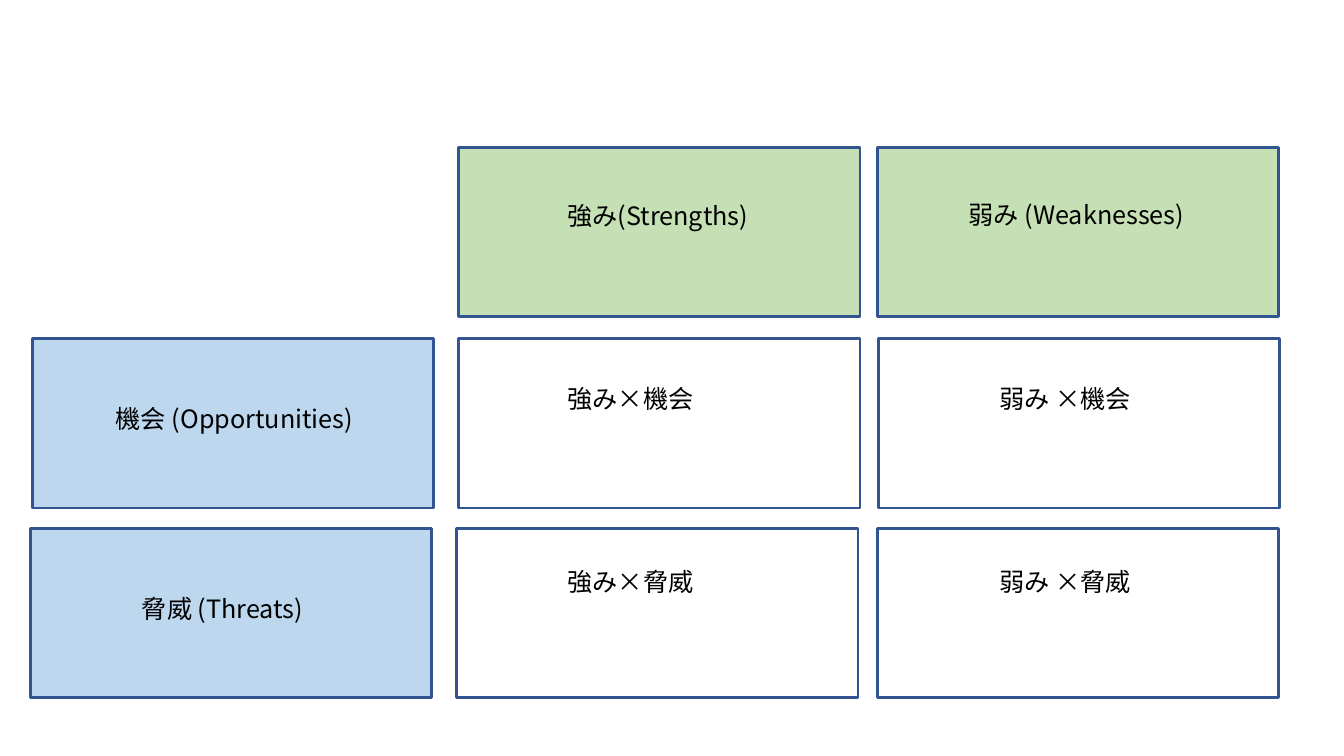
"""Build a cross-SWOT matrix slide with two header rows of labelled boxes."""
from lxml.etree import SubElement
from pptx import Presentation
from pptx.dml.color import RGBColor
from pptx.enum.shapes import MSO_SHAPE
from pptx.enum.text import MSO_AUTO_SIZE
from pptx.oxml.ns import qn
from pptx.util import Inches, Pt

FONT = "Noto Sans CJK JP"
GREEN, BLUE, BORDER, BLACK = "C5E0B4", "BDD7EE", "325491", "000000"
COLUMNS = [0.32, 4.55, 8.7]
ROWS = [1.46, 3.36, 5.24]
BOX_WIDTH, BOX_HEIGHT, LABEL_HEIGHT = 3.98, 1.68, 0.4


def color(value):
    return RGBColor.from_string(value)


def add_label(text, left, top, width, fill=None, size=18, font=FONT, ink=BLACK):
    label = page.shapes.add_textbox(
        Inches(left), Inches(top), Inches(width), Inches(LABEL_HEIGHT))
    if fill:
        label.fill.solid()
        label.fill.fore_color.rgb = color(fill)
    frame = label.text_frame
    frame.word_wrap = True
    frame.auto_size = MSO_AUTO_SIZE.SHAPE_TO_FIT_TEXT
    span = frame.paragraphs[0].add_run()
    span.text = text
    span.font.size = Pt(size)
    span.font.name = font
    span.font.color.rgb = color(ink)
    SubElement(span.font._element, qn("a:ea"), typeface=font)


deck = Presentation()
deck.slide_width, deck.slide_height = Inches(13.33), Inches(7.5)
page = deck.slides.add_slide(deck.slide_layouts[6])

# column, row, sideways nudge, fill, text, label left, label top, label width
cells = [
    (1, 0, 0, GREEN, "強み(Strengths)", 5.53, 1.94, 2.27),
    (2, 0, 0, GREEN, "弱み (Weaknesses)", 9.51, 1.93, 2.58),
    (0, 1, 0, BLUE, "機会 (Opportunities)", 1.05, 3.95, 2.68),
    (0, 2, -0.02, BLUE, "脅威 (Threats)", 1.31, 5.84, 2.13),
    (1, 1, 0, None, "強み×機会", 5.53, 3.75, 2.27),
    (1, 2, -0.02, None, "強み×脅威", 5.53, 5.57, 2.27),
    (2, 1, 0.01, None, "弱み ×機会", 9.81, 3.75, 2.58),
    (2, 2, 0, None, "弱み ×脅威", 9.81, 5.57, 2.58),
]

for column, row, nudge, fill, text, left, top, width in cells:
    box = page.shapes.add_shape(
        MSO_SHAPE.RECTANGLE, Inches(COLUMNS[column] + nudge), Inches(ROWS[row]),
        Inches(BOX_WIDTH), Inches(BOX_HEIGHT))
    box.shadow.inherit = False
    if fill:
        box.fill.solid()
        box.fill.fore_color.rgb = color(fill)
    else:
        box.fill.background()
    box.line.color.rgb = color(BORDER)
    box.line.width = Pt(2)
    add_label(text, left, top, width, fill=fill)

deck.save("out.pptx")
